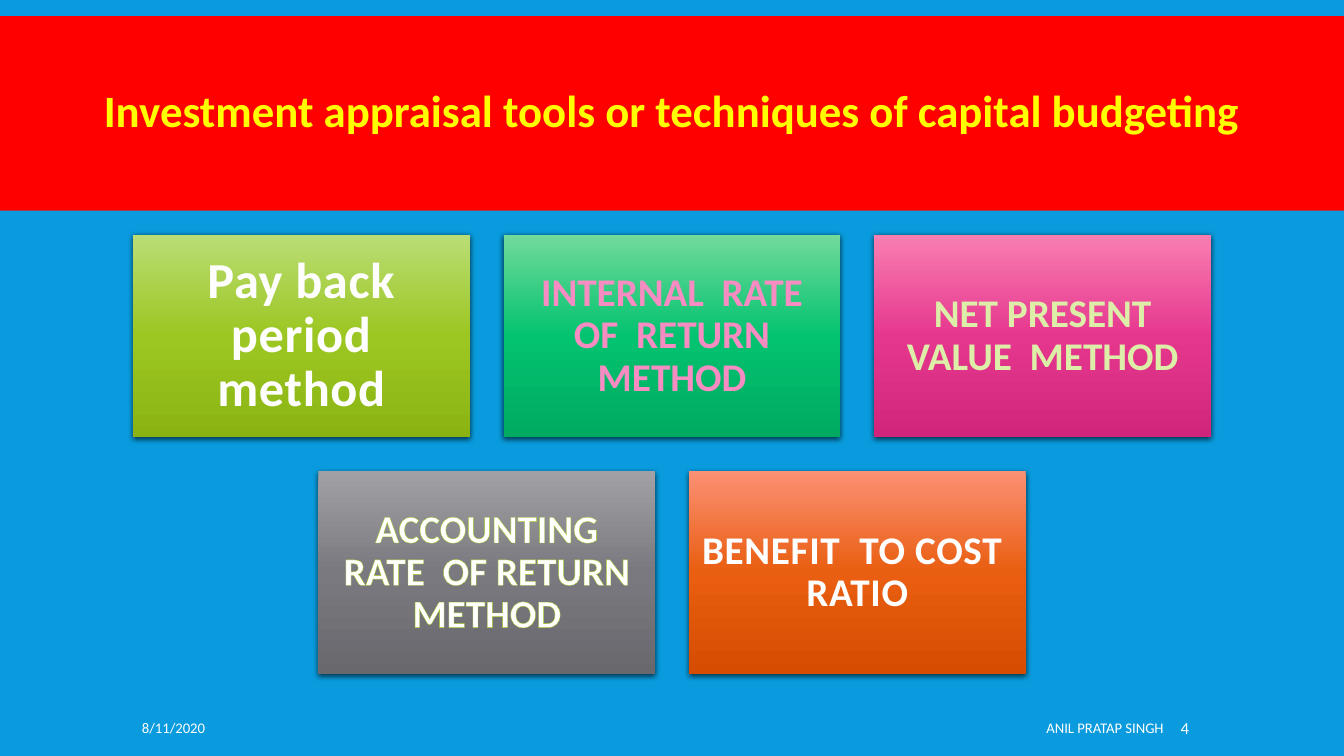
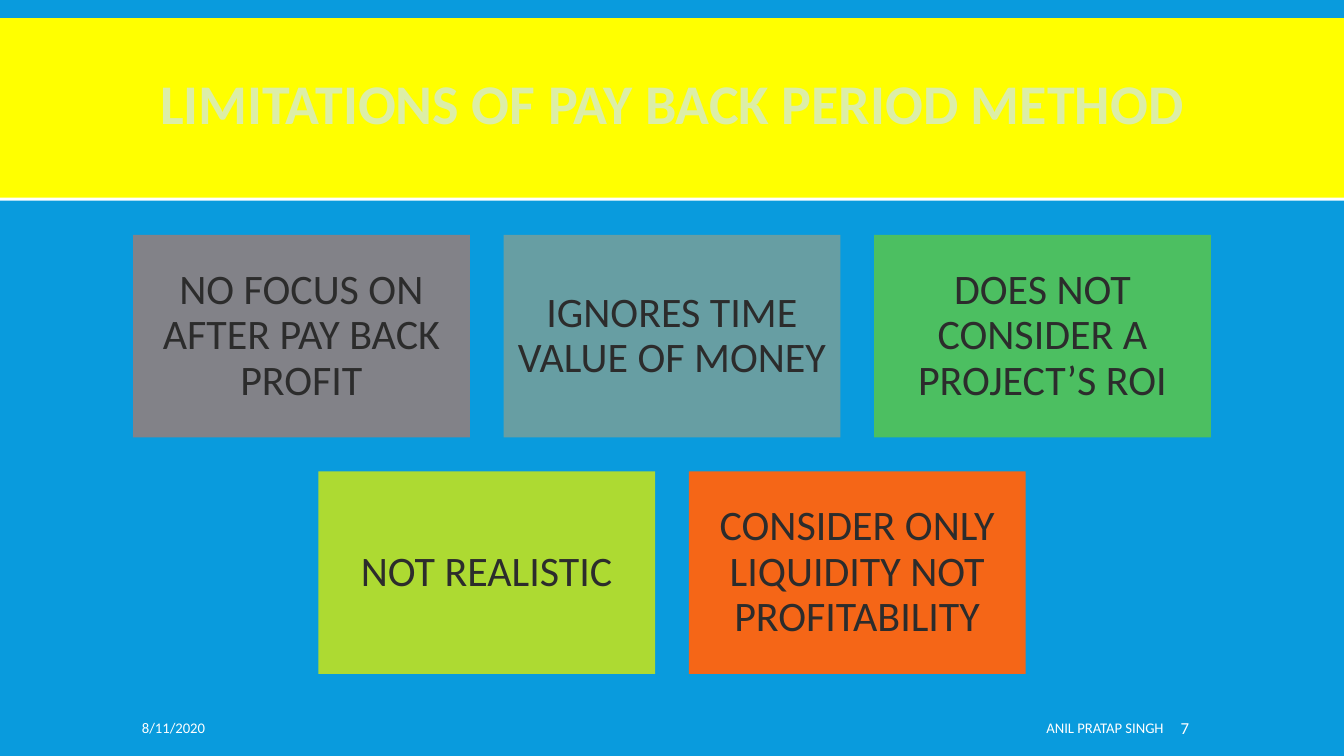
from lxml.etree import SubElement
from pptx import Presentation
from pptx.dml.color import RGBColor
from pptx.enum.shapes import MSO_SHAPE
from pptx.enum.text import MSO_ANCHOR, PP_ALIGN
from pptx.oxml import parse_xml
from pptx.oxml.ns import nsdecls, qn
from pptx.util import Inches, Pt

FONT = "Calibri"
COLORS = {
    "sky": "099BDD", "white": "FFFFFF", "soft_white": "FEFEFE", "red": "FF0000",
    "yellow": "FFFF00", "pale_lime": "DCEEA7", "lime": "A5D028", "amber": "FFC000",
    "pink": "F24099", "ink": "2C2C2C", "gray": "828288", "teal": "679EA3",
    "green": "4CBF61", "bright_lime": "ADDA32", "orange": "F56617",
}
# Gradients run from top to bottom: (position in percent, colour)
GRADIENTS = {
    "lime": [(0, "BADD75"), (50, "9CC621"), (100, "8BB413")],
    "green": [(0, "72DA9A"), (50, "03C370"), (100, "00AA61")],
    "pink": [(0, "F87EB1"), (50, "E6378F"), (100, "D0257B")],
    "gray": [(0, "A1A1A5"), (50, "79797F"), (100, "68686D")],
    "orange": [(0, "FB9074"), (50, "E95E10"), (100, "D64D01")],
    "pink_text": [(0, "F24099"), (4, "F78CC2"), (87, "FCD9EB")],
}

GLOWING = {"bold": True, "color": "soft_white", "outline": ("amber", 0.75), "spacing": 0.5}
LIME_EDGED = {"bold": True, "color": "pale_lime", "outline": ("lime", 1.75)}
PLAIN = {"size": 30, "color": "ink"}

SLIDES = [
    {
        "number": "4",
        "title": "Investment appraisal tools or techniques of capital budgeting",
        "title_style": {**LIME_EDGED, "size": 32, "color": "yellow"},
        "band": ("red", 0.16, 1.93),
        "raised": True,
        "cards": [
            ("Pay back period method", "lime", {**GLOWING, "size": 36}),
            ("INTERNAL  RATE OF  RETURN METHOD", "green",
             {"size": 28, "bold": True, "gradient": "pink_text", "outline": ("pink", 1)}),
            ("NET PRESENT VALUE  METHOD", "pink", {**LIME_EDGED, "size": 28}),
            ("ACCOUNTING RATE  OF RETURN METHOD", "gray",
             {"size": 28, "bold": True, "color": "white", "outline": ("lime", 0.52)}),
            ("BENEFIT  TO COST  RATIO", "orange", {**GLOWING, "size": 28}),
        ],
    },
    {
        "number": "7",
        "title": "LIMITATIONS OF PAY BACK PERIOD METHOD",
        "title_style": {**LIME_EDGED, "size": 40},
        "band": ("yellow", 0.18, 1.78),
        "raised": False,
        "cards": [
            ("NO FOCUS ON AFTER PAY BACK PROFIT", "gray", PLAIN),
            ("IGNORES TIME VALUE OF MONEY", "teal", PLAIN),
            ("DOES NOT CONSIDER A PROJECT’S ROI", "green", PLAIN),
            ("NOT REALISTIC", "bright_lime", PLAIN),
            ("CONSIDER ONLY LIQUIDITY NOT PROFITABILITY", "orange", PLAIN),
        ],
    },
]

SLIDE_W, SLIDE_H = 13.33, 7.5
CARD_W, CARD_H, CARD_GAP = 3.34, 2.01, 0.335
CARDS_TOP, PER_ROW = 2.33, 3


def rgb(name):
    return RGBColor.from_string(COLORS[name])


def set_gradient(fill, owner, stops):
    """Give fill, whose XML sits in owner, a vertical gradient with any number of stops."""
    fill.gradient()
    fill.gradient_angle = 270
    stop_list = owner.find(qn("a:gradFill")).find(qn("a:gsLst"))
    for old_stop in list(stop_list):
        stop_list.remove(old_stop)
    for percent, color in stops:
        stop = SubElement(stop_list, qn("a:gs"), pos=str(percent * 1000))
        SubElement(stop, qn("a:srgbClr"), val=color)


def add_soft_shadow(shape):
    shape.element.spPr.append(parse_xml(
        f'<a:effectLst {nsdecls("a")}><a:outerShdw blurRad="{Pt(4)}" dist="{Pt(1.2)}" '
        'dir="5400000" algn="ctr" rotWithShape="0"><a:srgbClr val="000000">'
        '<a:alpha val="68000"/></a:srgbClr></a:outerShdw></a:effectLst>'))


def add_rect(page, left, top, width, height):
    box = page.shapes.add_shape(MSO_SHAPE.RECTANGLE, Inches(left), Inches(top),
                                Inches(width), Inches(height))
    box.line.fill.background()
    return box


def add_flat_rect(page, color, *place):
    box = add_rect(page, *place)
    box.shadow.inherit = False
    box.fill.solid()
    box.fill.fore_color.rgb = rgb(color)
    return box


def write(box, text, style, align, line_spacing=1.0, inset=None):
    frame = box.text_frame
    frame.word_wrap = True
    frame.vertical_anchor = MSO_ANCHOR.MIDDLE
    if inset is not None:
        frame.margin_left = frame.margin_right = Inches(inset)
        frame.margin_top = frame.margin_bottom = Inches(inset)
    para = frame.paragraphs[0]
    para.alignment = align
    para.line_spacing = line_spacing
    span = para.add_run()
    span.text = text
    font = span.font
    font.name = FONT
    font.size = Pt(style["size"])
    font.bold = style.get("bold", False)
    props = next(box.element.iter(qn("a:rPr")))
    if "gradient" in style:
        set_gradient(font.fill, props, GRADIENTS[style["gradient"]])
    else:
        font.color.rgb = rgb(style["color"])
    if "spacing" in style:
        props.set("spc", str(int(style["spacing"] * 100)))
    if "outline" in style:
        color, width = style["outline"]
        props.insert(0, parse_xml(
            f'<a:ln {nsdecls("a")} w="{Pt(width)}"><a:solidFill>'
            f'<a:srgbClr val="{COLORS[color]}"/></a:solidFill></a:ln>'))


def add_title(page, content):
    add_flat_rect(page, "white", 0, 0.19, SLIDE_W, 1.8)
    color, top, height = content["band"]
    band = add_flat_rect(page, color, 0, top, SLIDE_W, height)
    write(band, content["title"], content["title_style"], PP_ALIGN.CENTER, 0.85)


def add_cards(page, cards, raised):
    """Lay the cards out in centred rows."""
    for start in range(0, len(cards), PER_ROW):
        row = cards[start:start + PER_ROW]
        row_width = len(row) * (CARD_W + CARD_GAP) - CARD_GAP
        top = CARDS_TOP + start // PER_ROW * (CARD_H + CARD_GAP)
        for column, (text, color, style) in enumerate(row):
            left = (SLIDE_W - row_width) / 2 + column * (CARD_W + CARD_GAP)
            place = (left, top, CARD_W, CARD_H)
            if raised:
                card = add_rect(page, *place)
                set_gradient(card.fill, card.element.spPr, GRADIENTS[color])
                add_soft_shadow(card)
            else:
                card = add_flat_rect(page, color, *place)
            inset = 0.15 if style["size"] > 30 else 0.12
            write(card, text, style, PP_ALIGN.CENTER, 0.9, inset)


def add_footer(page, number):
    for text, left, width, size, align, left_inset in [
        ("8/11/2020", 1.31, 3.28, 10.5, PP_ALIGN.LEFT, 0.1),
        ("ANIL PRATAP SINGH", 6.12, 5.52, 10.5, PP_ALIGN.RIGHT, 0.1),
        (number, 11.66, 1.03, 12, PP_ALIGN.LEFT, 0.05),
    ]:
        box = page.shapes.add_textbox(Inches(left), Inches(7.02), Inches(width), Inches(0.4))
        write(box, text, {"size": size, "color": "white"}, align)
        box.text_frame.margin_left = Inches(left_inset)


def main():
    deck = Presentation()
    deck.slide_width, deck.slide_height = Inches(SLIDE_W), Inches(SLIDE_H)
    for content in SLIDES:
        page = deck.slides.add_slide(deck.slide_layouts[6])
        page.background.fill.solid()
        page.background.fill.fore_color.rgb = rgb("sky")
        add_title(page, content)
        add_cards(page, content["cards"], content["raised"])
        add_footer(page, content["number"])
    deck.save("out.pptx")


if __name__ == "__main__":
    main()
